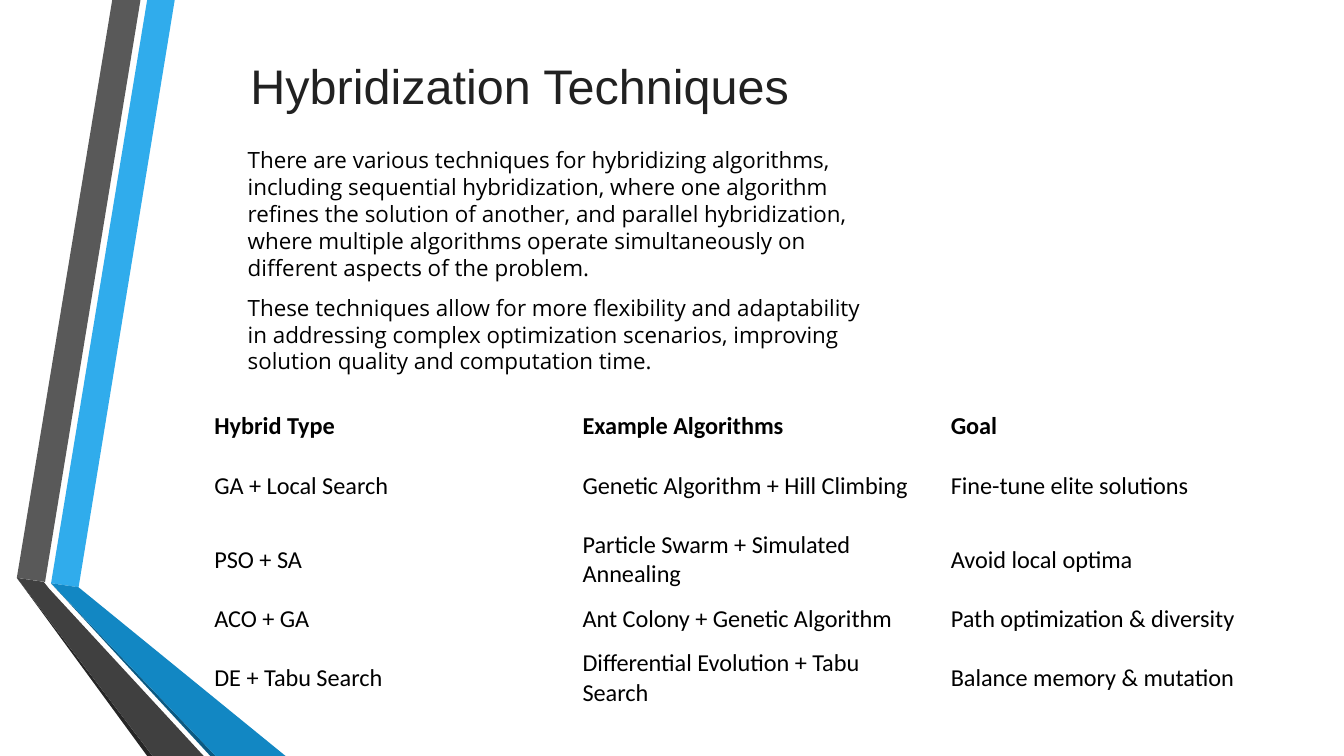
from collections import namedtuple

from pptx import Presentation
from pptx.dml.color import RGBColor as Color
from pptx.enum.text import MSO_ANCHOR as Anchor, PP_ALIGN as Align
from pptx.oxml.ns import qn
from pptx.util import Pt

PX = 4572  # EMU in one px, 200 px to the inch
INSET = 20
Box = namedtuple("Box", "left top width height")


class Theme:
    black = "000000"
    title = {"name": "Arial", "size": Pt(26), "color": "212121"}
    body = {"name": "Open Sans", "size": Pt(12), "color": black}
    cell = {"name": "Calibri", "size": Pt(13), "color": black, "bold": False}
    header = {**cell, "bold": True}
    blue, blue_dark, blue_shade = "30ACEC", "1287C3", "0C5A82"
    gray, gray_dark, gray_shade = "595959", "404040", "262626"
    plain_table = "{2D5ABB26-0587-4C30-8999-92F81FD0307C}"  # no style, no grid


BODY = [
    "There are various techniques for hybridizing algorithms, including sequential "
    "hybridization, where one algorithm refines the solution of another, and parallel "
    "hybridization, where multiple algorithms operate simultaneously on different "
    "aspects of the problem.",
    "These techniques allow for more flexibility and adaptability in addressing complex "
    "optimization scenarios, improving solution quality and computation time.",
]
ROWS = [
    ("Hybrid Type", "Example Algorithms", "Goal"),
    ("GA + Local Search", "Genetic Algorithm + Hill Climbing", "Fine-tune elite solutions"),
    ("PSO + SA", "Particle Swarm + Simulated Annealing", "Avoid local optima"),
    ("ACO + GA", "Ant Colony + Genetic Algorithm", "Path optimization & diversity"),
    ("DE + Tabu Search", "Differential Evolution + Tabu Search", "Balance memory & mutation"),
]
ROW_HEIGHTS = [66, 110, 110, 66, 110]


def emu(box):
    return [value * PX for value in box]


def apply(target, values):
    for name, value in values.items():
        setattr(target, name, value)


def write(para, text, font, **layout):
    span = para.add_run()
    span.text = text
    apply(span.font, {key: value for key, value in font.items() if key != "color"})
    span.font.color.rgb = Color.from_string(font["color"])
    apply(para, layout)


def add_text_frame(page, box):
    frame = page.shapes.add_textbox(*emu(box)).text_frame
    apply(frame, {"word_wrap": True, "vertical_anchor": Anchor.TOP})
    apply(frame, {f"margin_{side}": INSET * PX for side in ("left", "top", "right", "bottom")})
    return frame


def add_ribbons(page, box):
    """Two folded ribbons running down the left edge."""
    bottom = box.height
    ribbons = [
        # upper bands
        (Theme.blue, [(51, 868), (92, 874), (235, 0), (194, 0)]),
        (Theme.gray, [(184, 0), (142, 0), (0, 860), (42, 866)]),
        # thin shaded edges
        (Theme.gray_shade, [(0, 860), (194, bottom), (202, bottom)]),
        (Theme.blue_shade, [(51, 868), (288, bottom), (296, bottom)]),
        # lower bands
        (Theme.blue_dark, [(51, 868), (296, bottom), (400, bottom), (92, 874)]),
        (Theme.gray_dark, [(278, bottom), (48, 876), (40, 866), (0, 860), (202, bottom)]),
    ]
    for color, points in ribbons:
        builder = page.shapes.build_freeform(*points[0], scale=PX)
        builder.add_line_segments(points[1:], close=True)
        band = builder.convert_to_shape(box.left * PX, box.top * PX)
        band.shadow.inherit = False
        band.fill.solid()
        band.fill.fore_color.rgb = Color.from_string(color)
        band.line.fill.background()


def add_title(page, box):
    frame = add_text_frame(page, box)
    write(frame.paragraphs[0], "Hybridization Techniques", Theme.title,
          alignment=Align.CENTER)


def add_body(page, box):
    frame = add_text_frame(page, box)
    for index, text in enumerate(BODY):
        para = frame.add_paragraph() if index else frame.paragraphs[0]
        write(para, text, Theme.body, alignment=Align.LEFT,
              space_before=Pt(2.4), space_after=Pt(4.5))
        para._p.get_or_add_pPr().set("marL", str(47 * PX))


def add_hybrid_table(page, box):
    count = len(ROWS[0])
    table = page.shapes.add_table(len(ROWS), count, *emu(box)).table
    apply(table, {"first_row": False, "horz_banding": False})
    table._tbl.tblPr.find(qn("a:tableStyleId")).text = Theme.plain_table
    for column in table.columns:
        column.width = box.width // count * PX
    for index, (texts, height) in enumerate(zip(ROWS, ROW_HEIGHTS)):
        row = table.rows[index]
        row.height = height * PX
        for cell, text in zip(row.cells, texts):
            cell.fill.background()
            cell.vertical_anchor = Anchor.MIDDLE
            write(cell.text_frame.paragraphs[0], text,
                  Theme.cell if index else Theme.header)


def main():
    deck = Presentation()
    apply(deck, {"slide_width": 2000 * PX, "slide_height": 1125 * PX})
    page = deck.slides.add_slide(deck.slide_layouts[6])
    add_ribbons(page, Box(25, 0, 400, 1125))
    add_title(page, Box(274, 63, 1000, 268))
    add_body(page, Box(302, 198, 1000, 608))
    add_hybrid_table(page, Box(299, 602, 1644, sum(ROW_HEIGHTS)))
    deck.save("out.pptx")


if __name__ == "__main__":
    main()
